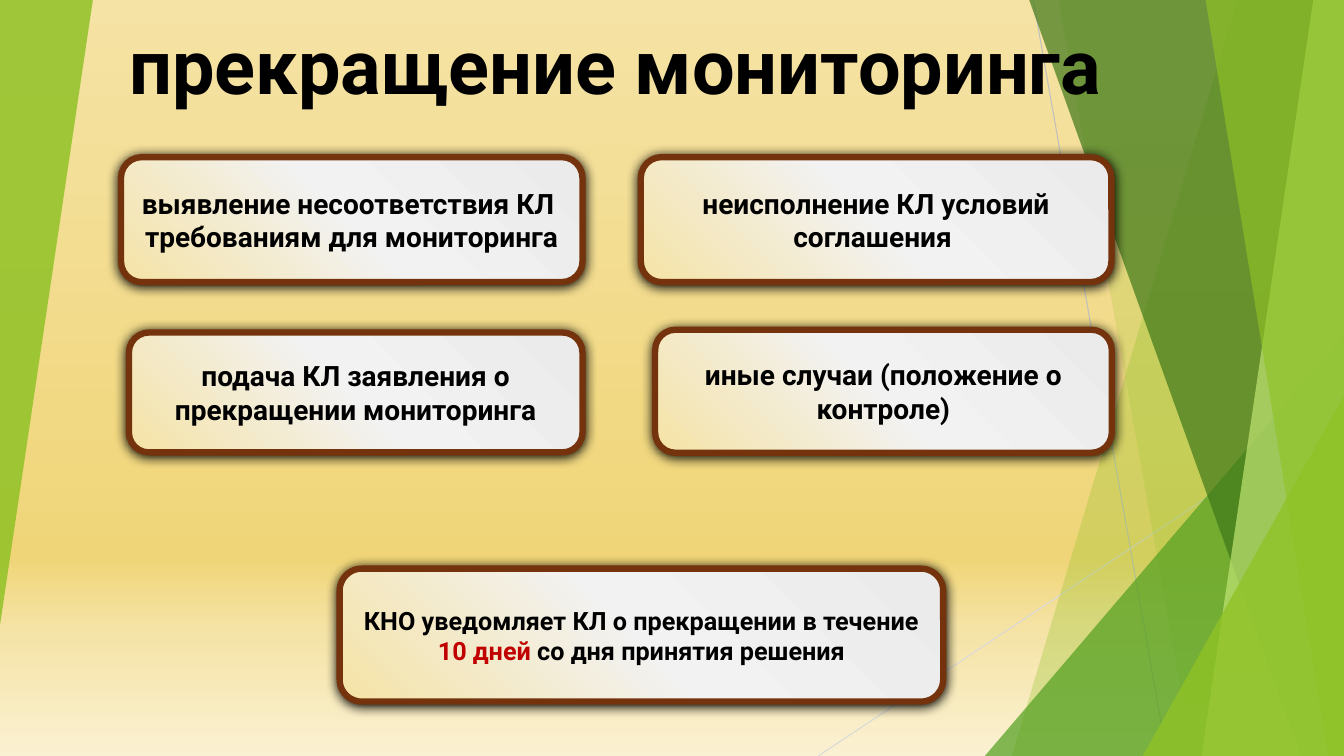
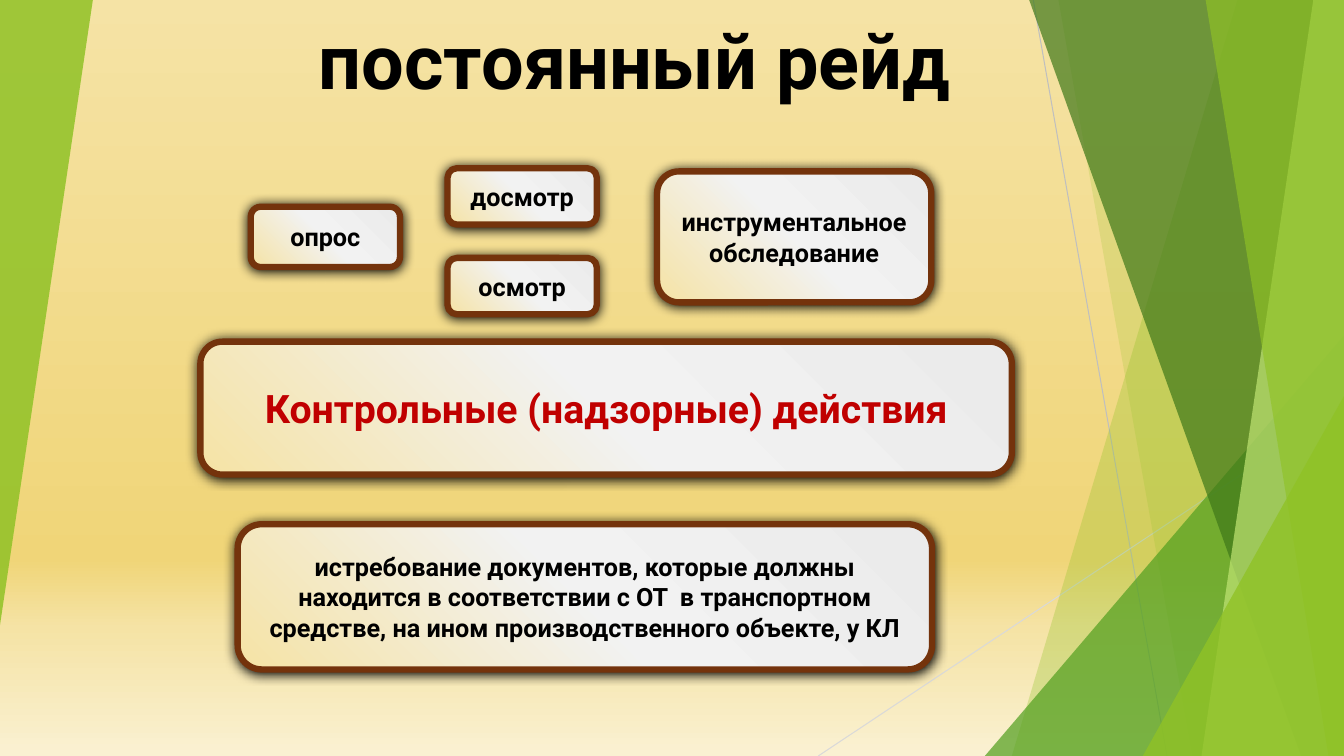
from dataclasses import dataclass

from lxml.etree import SubElement
from pptx import Presentation
from pptx.dml.color import RGBColor
from pptx.enum.shapes import MSO_CONNECTOR as Connector, MSO_SHAPE as Shape
from pptx.enum.text import MSO_ANCHOR as Anchor, PP_ALIGN as Align
from pptx.oxml.ns import qn
from pptx.util import Cm, Pt


@dataclass(frozen=True)
class Theme:
    width: float = 33.87
    height: float = 19.05
    font: str = "Roboto"
    title_size: int = 54
    banner_size: int = 28
    large_size: int = 20
    body_size: int = 18
    ink: str = "000000"
    accent: str = "C00000"
    border: str = "74330C"
    border_width: float = 4.5
    lime: str = "90C226"
    green: str = "54A021"
    forest: str = "3F7819"
    pale_lime: str = "C0E474"
    ray_gray: str = "BFBFBF"
    ray_light: str = "D9D9D9"
    sand: tuple = ((0, "F5E3A5"), (74, "F0D578"), (83, "F5E3A5"), (100, "FAF1D2"))
    card: tuple = ((0, "EBEBEB"), (50, "F2F2F2"), (100, "F5E3A5"))


THEME = Theme()


def set_gradient(fill, owner, stops, clockwise_angle):
    fill.gradient()
    fill.gradient_angle = 360 - clockwise_angle
    stop_list = owner.xpath(".//a:gradFill/a:gsLst")[0]
    for default_stop in list(stop_list):
        stop_list.remove(default_stop)
    for percent, color in stops:
        stop = SubElement(stop_list, qn("a:gs"), pos=str(percent * 1000))
        SubElement(stop, qn("a:srgbClr"), val=color)


def set_glass(pane, color, opacity):
    pane.shadow.inherit = False
    pane.line.fill.background()
    pane.fill.solid()
    pane.fill.fore_color.rgb = RGBColor.from_string(color)
    tint = pane.element.xpath("./p:spPr/a:solidFill/a:srgbClr")[0]
    SubElement(tint, qn("a:alpha"), val=str(opacity * 1000))


def add_ray(slide, start, end, color):
    ray = slide.shapes.add_connector(
        Connector.STRAIGHT, *(Cm(value) for value in (*start, *end))
    )
    ray.line.color.rgb = RGBColor.from_string(color)
    ray.line.width = Pt(0.75)
    SubElement(ray.element.spPr, qn("a:effectLst"))


def add_facet(slide, top_x, bottom_x, color, opacity):
    top = Cm(-0.02)
    right, bottom = Cm(THEME.width), Cm(THEME.height)
    outline = slide.shapes.build_freeform(Cm(top_x), top)
    outline.add_line_segments([(right, top), (right, bottom), (Cm(bottom_x), bottom)])
    set_glass(outline.convert_to_shape(), color, opacity)


def add_wedge(slide, left, top, width, height, color, opacity, rotation=0):
    wedge = slide.shapes.add_shape(
        Shape.ISOSCELES_TRIANGLE, Cm(left), Cm(top), Cm(width), Cm(height)
    )
    wedge.adjustments[0] = 1
    wedge.rotation = rotation
    set_glass(wedge, color, opacity)


def add_corner_wedge(slide, left, top, color, opacity):
    add_wedge(slide, left, top, THEME.width - left, THEME.height - top, color, opacity)


def add_backdrop(slide):
    set_gradient(slide.background.fill, slide.element, THEME.sand, 90)
    add_ray(slide, (26.04, 0), (29.41, THEME.height), THEME.ray_gray)
    add_ray(slide, (THEME.width, 10.24), (20.62, THEME.height), THEME.ray_light)
    add_facet(slide, 31.19, 25.5, THEME.lime, 30)
    add_facet(slide, 26.67, 30.05, THEME.lime, 20)
    add_corner_wedge(slide, 24.82, 8.46, THEME.green, 72)
    add_facet(slide, 25.93, 32.79, THEME.forest, 70)
    add_facet(slide, 33.1, 30.28, THEME.pale_lime, 70)
    add_facet(slide, 30.38, 33.48, THEME.lime, 65)
    add_corner_wedge(slide, 28.8, 9.98, THEME.lime, 80)
    add_wedge(slide, 0, 0, 2.34, 15.75, THEME.lime, 85, rotation=180)


def write(frame, parts, size, anchor):
    frame.word_wrap = True
    frame.vertical_anchor = anchor
    paragraph = frame.paragraphs[0]
    paragraph.alignment = Align.CENTER
    for text, color in parts:
        run = paragraph.add_run()
        run.text = text
        run.font.name = THEME.font
        run.font.size = Pt(size)
        run.font.bold = True
        run.font.color.rgb = RGBColor.from_string(color)


def add_title(slide, text, left, height):
    title = slide.shapes.add_textbox(Cm(left), Cm(0.46), Cm(29.46), Cm(height))
    write(title.text_frame, [(text, THEME.ink)], THEME.title_size, Anchor.BOTTOM)


def add_card(slide, box, parts, size=THEME.body_size):
    card = slide.shapes.add_shape(Shape.ROUNDED_RECTANGLE, *(Cm(value) for value in box))
    set_gradient(card.fill, card.element, THEME.card, 135)
    card.line.color.rgb = RGBColor.from_string(THEME.border)
    card.line.width = Pt(THEME.border_width)
    card.shadow.inherit = False
    effects = card.element.xpath("./p:spPr/a:effectLst")[0]
    shadow = SubElement(
        effects, qn("a:outerShdw"), blurRad=str(Pt(8.5)), dist=str(Pt(1)),
        dir="5400000", algn="ctr", rotWithShape="0",
    )
    SubElement(shadow, qn("a:srgbClr"), val=THEME.ink)
    if isinstance(parts, str):
        parts = [(parts, THEME.ink)]
    write(card.text_frame, parts, size, Anchor.MIDDLE)


def add_slide(deck, title, title_left, title_height):
    slide = deck.slides.add_slide(deck.slide_layouts[6])
    add_backdrop(slide)
    add_title(slide, title, title_left, title_height)
    return slide


def build_termination(deck):
    slide = add_slide(deck, "прекращение мониторинга", 0.79, 2.44)
    notice = [
        ("КНО уведомляет КЛ о прекращении в течение ", THEME.ink),
        ("10 дней ", THEME.accent),
        ("со дня принятия решения", THEME.ink),
    ]
    add_card(slide, (8.56, 14.33, 15.21, 3.35), notice)
    grounds = [
        ((16.15, 3.96, 11.86, 3.15), "неисполнение КЛ условий соглашения "),
        ((16.51, 8.31, 11.51, 3.1), "иные случаи (положение о контроле)"),
        ((3.25, 8.38, 11.43, 3.02), "подача КЛ заявления о прекращении мониторинга"),
        ((3.05, 3.96, 11.63, 3.15),
         "выявление несоответствия КЛ  требованиям для мониторинга"),
    ]
    for box, ground in grounds:
        add_card(slide, box, ground, THEME.large_size)


def build_raid(deck):
    slide = add_slide(deck, "постоянный рейд", 1.27, 2.31)
    heading = [("Контрольные (надзорные) действия", THEME.accent)]
    add_card(slide, (5.05, 8.61, 20.45, 3.35), heading, THEME.banner_size)
    actions = [
        ((11.28, 6.5, 3.76, 1.42), "осмотр"),
        ((11.28, 4.24, 3.76, 1.42), "досмотр"),
        ((6.32, 5.21, 3.76, 1.52), "опрос"),
        ((16.56, 4.32, 6.91, 3.3), "инструментальное обследование"),
        ((5.99, 13.21, 17.5, 3.66),
         "истребование документов, которые должны находится в соответствии с ОТ  "
         "в транспортном средстве, на ином производственного объекте, у КЛ"),
    ]
    for box, action in actions:
        add_card(slide, box, action)


def main():
    deck = Presentation()
    deck.slide_width = Cm(THEME.width)
    deck.slide_height = Cm(THEME.height)
    build_termination(deck)
    build_raid(deck)
    deck.save("out.pptx")


if __name__ == "__main__":
    main()
